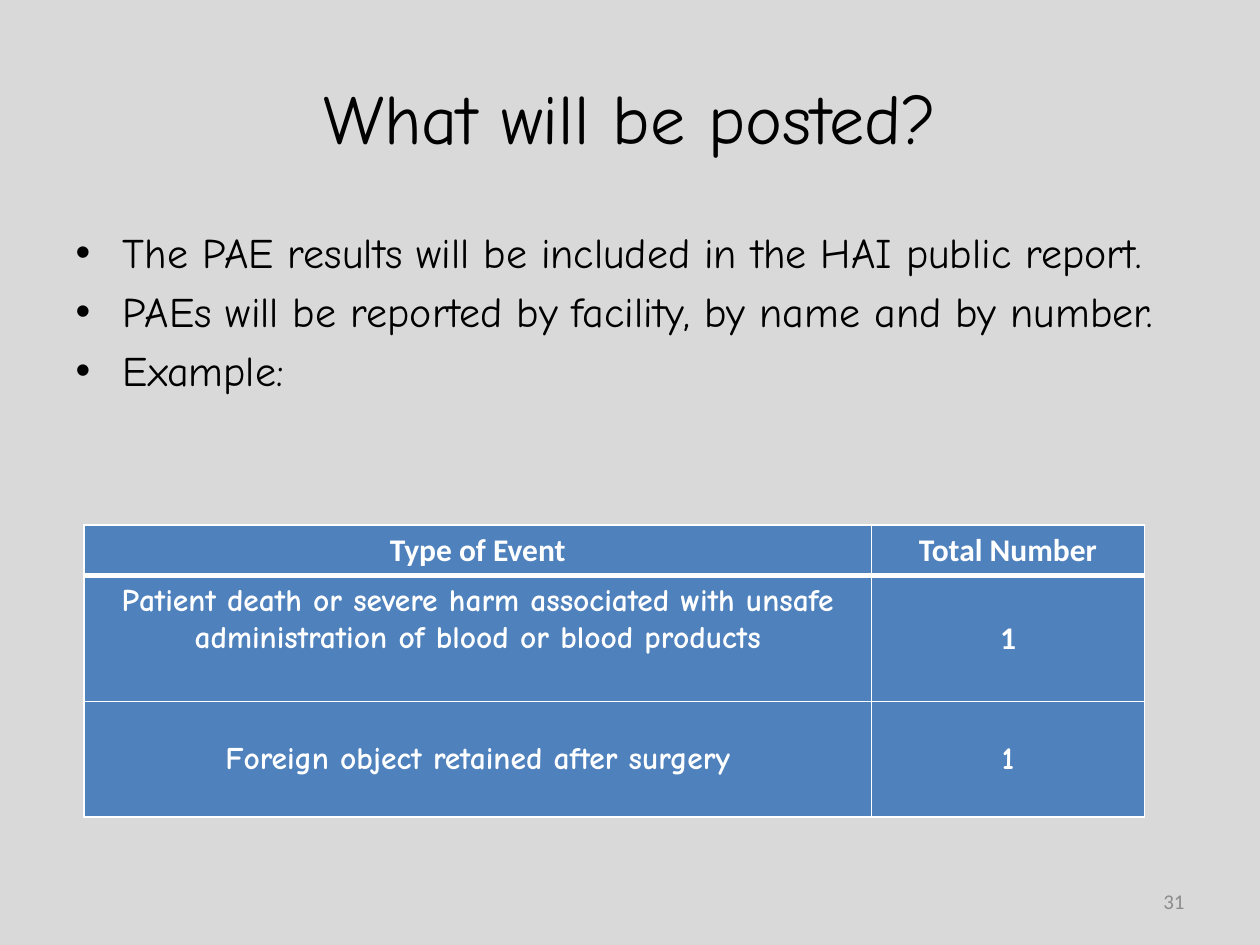
import pptx
import pptx.util
import pptx.dml.color
import pptx.enum.text
import pptx.oxml
import pptx.oxml.ns

Pt = pptx.util.Pt
ALIGN = pptx.enum.text.PP_ALIGN
ANCHOR = pptx.enum.text.MSO_ANCHOR

TITLE = "What will be posted?"
BULLETS = [
    "The PAE results will be included in the HAI public report.",
    "PAEs will be reported by facility, by name and by number.",
    "Example:",
]
NUMBER = "31"
HAND, SANS = "Comic Neue", "Calibri"
EVENTS = [
    [("Type of Event", SANS), ("Total Number", SANS)],
    [("Patient death or severe harm associated with unsafe "
      "administration of blood or blood products", HAND), ("1", SANS)],
    [("Foreign object retained after surgery", HAND), ("1", HAND)],
]
COLORS = {"back": "D9D9D9", "text": "000000", "number": "8C8C8C",
          "cell": "4F81BD", "white": "FFFFFF"}
BOXES = {
    "title": (36, 21.6, 648, 90),
    "body": (36, 126, 648, 356.4),
    "number": (516, 500.4, 168, 28.8),
    "table": (48, 300, 606, 166),
}
COLUMNS = [450, 156]
ROWS = [29, 71, 66]
FORMATS = {
    "title": {"size": Pt(40), "name": HAND},
    "body": {"size": Pt(24), "name": HAND},
    "number": {"size": Pt(12), "name": SANS},
    "cell": {"size": Pt(18), "bold": True},
}


def rgb(key):
    return pptx.dml.color.RGBColor.from_string(COLORS[key])


def write(p, text, color, align=None, **formats):
    r = p.add_run()
    r.text = text
    p.alignment = align
    for key, value in formats.items():
        setattr(r.font, key, value)
    r.font.color.rgb = rgb(color)


def place(shape, box):
    for key, value in zip(("left", "top", "width", "height"), box):
        setattr(shape, key, Pt(value))


def set_borders(cell, widths):
    tcPr = cell._tc.get_or_add_tcPr()
    for i, (side, width) in enumerate(widths.items()):
        tcPr.insert(i, pptx.oxml.parse_xml(
            f'<a:ln{side} {pptx.oxml.ns.nsdecls("a")} w="{Pt(width)}">'
            f'<a:solidFill><a:srgbClr val="{COLORS["white"]}"/></a:solidFill>'
            f'</a:ln{side}>'))


prs = pptx.Presentation()
prs.slide_width, prs.slide_height = Pt(720), Pt(540)
s = prs.slides.add_slide(prs.slide_layouts[1])
s.background.fill.solid()
s.background.fill.fore_color.rgb = rgb("back")

title, body = s.shapes.title, s.placeholders[1]
place(title, BOXES["title"])
title.text_frame.vertical_anchor = ANCHOR.MIDDLE
write(title.text_frame.paragraphs[0], TITLE, "text", ALIGN.CENTER, **FORMATS["title"])

place(body, BOXES["body"])
tf = body.text_frame
tf.auto_size = pptx.enum.text.MSO_AUTO_SIZE.NONE
for i, text in enumerate(BULLETS):
    p = tf.add_paragraph() if i else tf.paragraphs[0]
    write(p, text, "text", **FORMATS["body"])

tf = s.shapes.add_textbox(*map(Pt, BOXES["number"])).text_frame
tf.word_wrap = True
tf.vertical_anchor = ANCHOR.MIDDLE
write(tf.paragraphs[0], NUMBER, "number", ALIGN.RIGHT, **FORMATS["number"])

table = s.shapes.add_table(len(ROWS), len(COLUMNS), *map(Pt, BOXES["table"])).table
for column, width in zip(table.columns, COLUMNS):
    column.width = Pt(width)
for i, (row, height) in enumerate(zip(table.rows, ROWS)):
    row.height = Pt(height)
    for cell, (text, font) in zip(row.cells, EVENTS[i]):
        cell.vertical_anchor = ANCHOR.MIDDLE
        cell.fill.solid()
        cell.fill.fore_color.rgb = rgb("cell")
        set_borders(cell, {"L": 1, "R": 1, "T": 3 if i == 1 else 1, "B": 1 if i else 3})
        write(cell.text_frame.paragraphs[0], text, "white", ALIGN.CENTER,
              name=font, **FORMATS["cell"])
table.cell(1, 0).margin_bottom = Pt(25)

prs.save("out.pptx")
